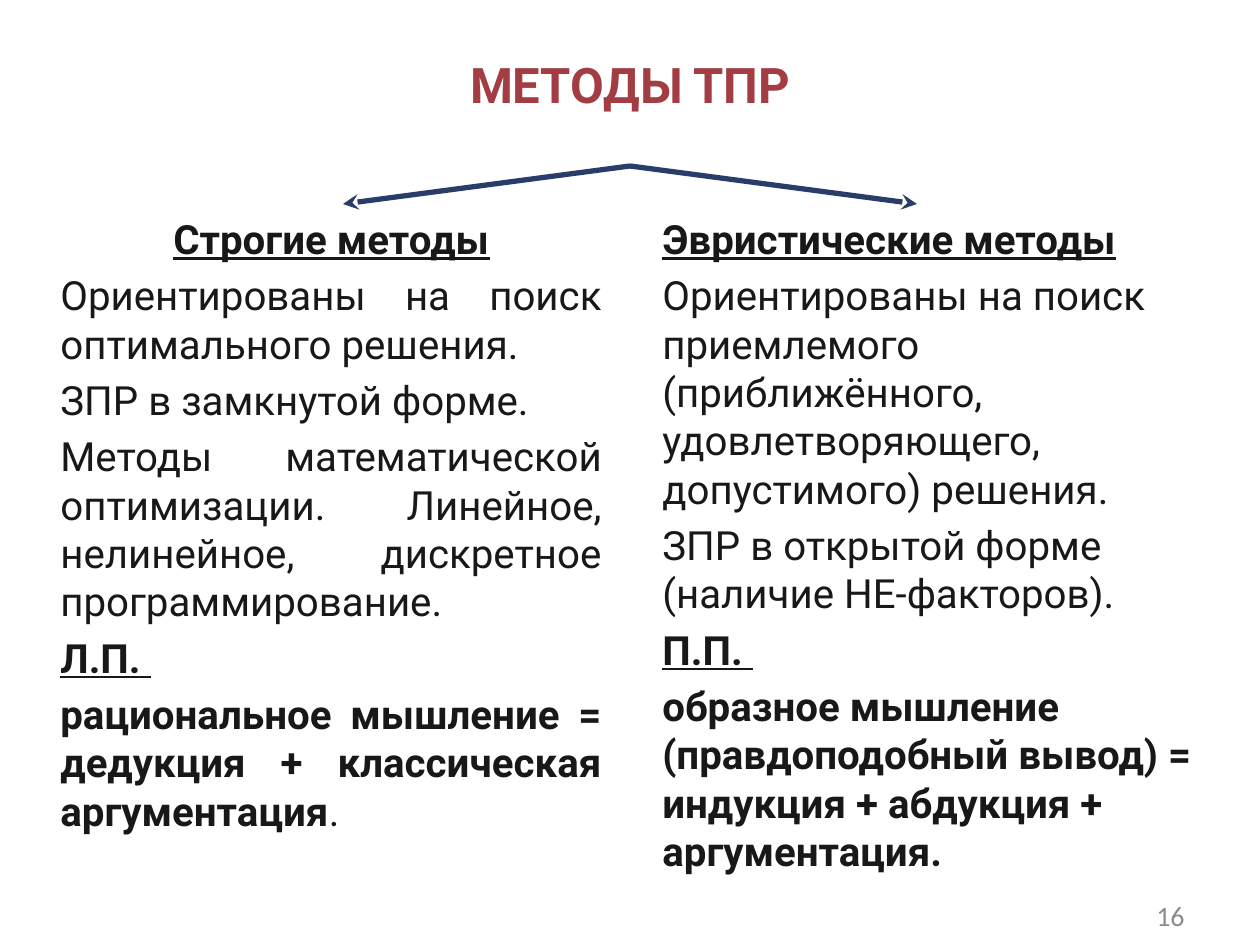
from dataclasses import dataclass

from lxml import etree
from pptx import Presentation
from pptx.dml.color import RGBColor
from pptx.enum.shapes import MSO_CONNECTOR as Connector
from pptx.enum.text import MSO_ANCHOR as Anchor, PP_ALIGN as Align
from pptx.oxml.ns import qn
from pptx.util import Emu, Pt

EMU_PER_PX = 914400 / 126


@dataclass(frozen=True)
class Theme:
    text_face: str = "Roboto"
    number_face: str = "Calibri"
    title_color: str = "A23E43"
    text_color: str = "181818"
    number_color: str = "8C8C8C"
    arrow_color: str = "293D69"
    title_size: int = 28
    text_size: int = 23
    number_size: int = 16
    arrow_width: int = 3
    line_pitch: float = 27.6
    paragraph_gap: float = 4.6


THEME = Theme()
PLAIN = {"bold": False, "underline": False}
BOLD = {"bold": True, "underline": False}
HEADING = {"bold": True, "underline": True}

STRICT_METHODS = [
    [("Строгие методы", HEADING)],
    [("Ориентированы на поиск оптимального решения.", PLAIN)],
    [("ЗПР в замкнутой форме.", PLAIN)],
    [("Методы математической оптимизации. Линейное, нелинейное, "
      "дискретное программирование.", PLAIN)],
    [("Л.П. ", HEADING)],
    [("рациональное мышление = дедукция + классическая аргументация", BOLD),
     (".", PLAIN)],
]
HEURISTIC_METHODS = [
    [("Эвристические методы", HEADING)],
    [("Ориентированы на поиск приемлемого (приближённого, "
      "удовлетворяющего, допустимого) решения.", PLAIN)],
    [("ЗПР в открытой форме (наличие НЕ-факторов).", PLAIN)],
    [("П.П. ", HEADING)],
    [("образное мышление (правдоподобный вывод) = индукция + абдукция + "
      "аргументация.", BOLD)],
]


def px(length):
    return Emu(round(length * EMU_PER_PX))


def add_frame(slide, box, anchor):
    frame = slide.shapes.add_textbox(*map(px, box)).text_frame
    frame.word_wrap = True
    frame.vertical_anchor = anchor
    return frame


def add_run(paragraph, words, face, size, color, style):
    run = paragraph.add_run()
    run.text = words
    font_values = {"name": face, "size": Pt(size), **style}
    for attribute, value in font_values.items():
        setattr(run.font, attribute, value)
    run.font.color.rgb = RGBColor.from_string(color)


def add_label(slide, box, words, align, face, size, color, style):
    """Place one line of text, centred vertically in its box."""
    paragraph = add_frame(slide, box, Anchor.MIDDLE).paragraphs[0]
    paragraph.alignment = align
    add_run(paragraph, words, face, size, color, style)


def add_methods(slide, box, methods, heading_align, text_align):
    frame = add_frame(slide, box, Anchor.TOP)
    for index, parts in enumerate(methods):
        paragraph = frame.add_paragraph() if index else frame.paragraphs[0]
        paragraph.alignment = text_align if index else heading_align
        paragraph.line_spacing = Pt(THEME.line_pitch)
        if index:
            paragraph.space_before = Pt(THEME.paragraph_gap)
        for words, style in parts:
            add_run(paragraph, words, THEME.text_face, THEME.text_size,
                    THEME.text_color, style)


def add_fork(slide, box):
    """Draw two arrows from the top centre of the box to its lower corners."""
    left, top, width, height = box
    for tip in (left, left + width):
        arrow = slide.shapes.add_connector(
            Connector.STRAIGHT, px(left + width / 2), px(top),
            px(tip), px(top + height))
        arrow.line.width = Pt(THEME.arrow_width)
        arrow.line.color.rgb = RGBColor.from_string(THEME.arrow_color)
        properties = arrow.line._get_or_add_ln()
        etree.SubElement(properties, qn("a:tailEnd"), type="stealth")
        etree.SubElement(arrow._element.spPr, qn("a:effectLst"))


def main():
    deck = Presentation()
    deck.slide_width, deck.slide_height = px(1260), px(945)
    slide = deck.slides.add_slide(deck.slide_layouts[6])

    add_label(slide, (63, 25, 1134, 117), "МЕТОДЫ ТПР", Align.CENTER,
              THEME.text_face, THEME.title_size, THEME.title_color, BOLD)
    add_label(slide, (1126, 890, 71, 50), "16", Align.RIGHT,
              THEME.number_face, THEME.number_size, THEME.number_color, PLAIN)
    add_methods(slide, (48, 208, 567, 662), STRICT_METHODS,
                Align.CENTER, Align.JUSTIFY)
    add_methods(slide, (650, 208, 567, 662), HEURISTIC_METHODS,
                Align.LEFT, Align.LEFT)
    add_fork(slide, (343, 166, 574, 38))
    deck.save("out.pptx")


if __name__ == "__main__":
    main()
